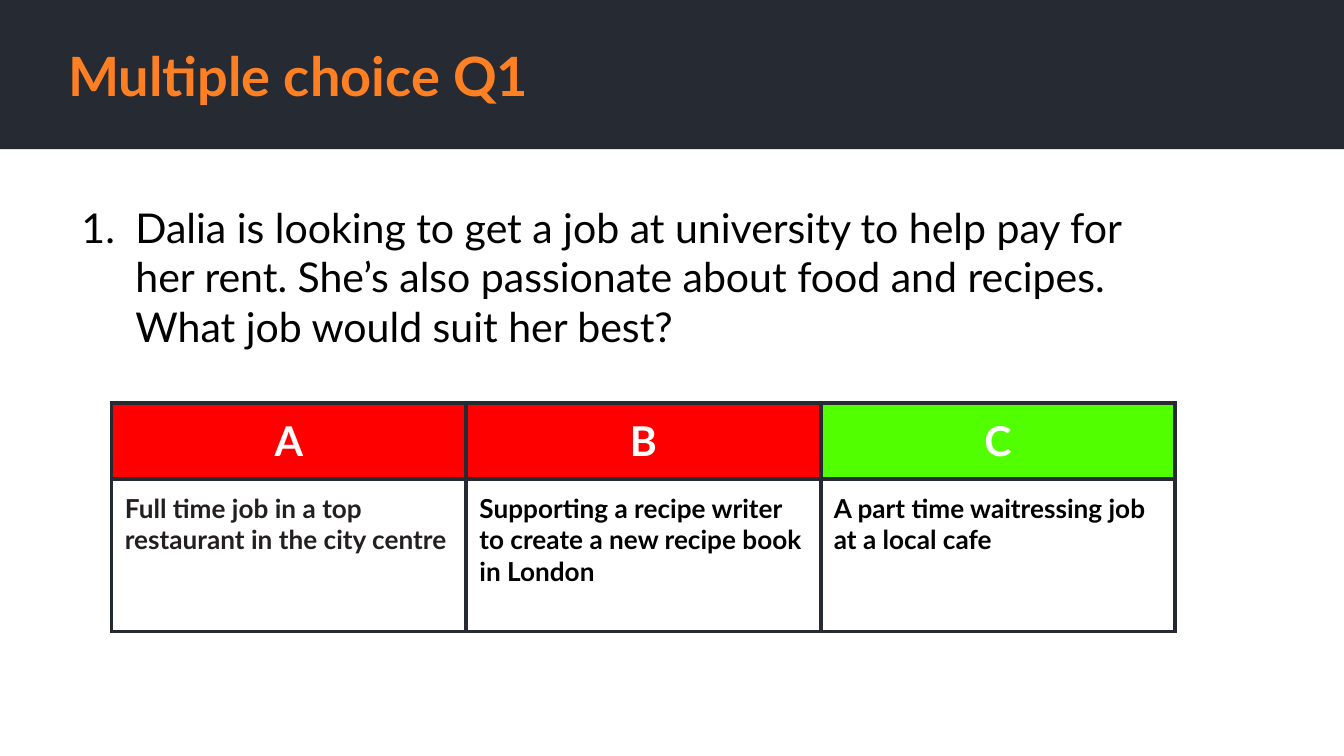
from collections import namedtuple

from lxml import etree
from pptx import Presentation
from pptx.dml.color import RGBColor
from pptx.enum.shapes import MSO_SHAPE as Shape
from pptx.enum.text import MSO_ANCHOR as Anchor, MSO_AUTO_SIZE as AutoSize, PP_ALIGN as Align
from pptx.oxml.ns import qn
from pptx.util import Cm, Pt

Box = namedtuple("Box", "left top width height")

FONT = "Lato"
DARK, ORANGE, RED, GREEN = "262A33", "FF8022", "FF0000", "51FF00"
BLACK, WHITE, CHARCOAL = "000000", "FFFFFF", "231F20"
INSET = 0.25
BORDER = Pt(2.25)

# Letter, header fill, answer, answer colour
ANSWERS = [
    ("A", RED, "Full time job in a top restaurant in the city centre", CHARCOAL),
    ("B", RED, "Supporting a recipe writer to create a new recipe book in London", BLACK),
    ("C", GREEN, "A part time waitressing job at a local cafe", BLACK),
]


def rgb(value):
    return RGBColor.from_string(value)


def place(shape, box):
    shape.left, shape.top, shape.width, shape.height = map(Cm, box)


def set_insets(frame):
    frame.margin_left = frame.margin_right = Cm(INSET)
    frame.margin_top = frame.margin_bottom = Cm(INSET)


def write(paragraph, text, size, color, bold=False, align=Align.LEFT):
    paragraph.text = text
    paragraph.alignment = align
    paragraph.space_before = Pt(0)
    font = paragraph.font
    font.name, font.size, font.bold = FONT, Pt(size), bold
    font.color.rgb = rgb(color)


def number_paragraph(paragraph, color, margin, hanging):
    properties = paragraph._p.get_or_add_pPr()
    properties.set("marL", str(Cm(margin)))
    properties.set("indent", str(-Cm(hanging)))
    bullet_color = etree.SubElement(properties, qn("a:buClr"))
    etree.SubElement(bullet_color, qn("a:srgbClr"), val=color)
    etree.SubElement(properties, qn("a:buFont"), typeface=FONT)
    etree.SubElement(properties, qn("a:buAutoNum"), type="arabicPeriod")


def add_borders(cell, color):
    properties = cell._tc.get_or_add_tcPr()
    for side in ("lnL", "lnR", "lnT", "lnB"):
        line = etree.SubElement(properties, qn(f"a:{side}"), w=str(BORDER))
        fill = etree.SubElement(line, qn("a:solidFill"))
        etree.SubElement(fill, qn("a:srgbClr"), val=color)


def fill_placeholder(placeholder, box, anchor):
    place(placeholder, box)
    frame = placeholder.text_frame
    frame.word_wrap = True
    frame.auto_size = AutoSize.NONE
    frame.vertical_anchor = anchor
    set_insets(frame)
    return frame.paragraphs[0]


def add_header(slide, box, text):
    # Dark band behind the title
    band = slide.shapes.add_shape(Shape.RECTANGLE, *map(Cm, box))
    band.shadow.inherit = False
    band.fill.solid()
    band.fill.fore_color.rgb = rgb(DARK)
    band.line.fill.background()
    slide.shapes._spTree.insert(2, band._element)

    # Title, centred vertically in the band
    height = 1.42
    title_box = Box(box.left + 1.04, box.top + (box.height - height) / 2,
                    box.width - 3.2, height)
    paragraph = fill_placeholder(slide.shapes.title, title_box, Anchor.MIDDLE)
    write(paragraph, text, 29, ORANGE, bold=True)


def add_question(slide, box, text):
    paragraph = fill_placeholder(slide.placeholders[1], box, Anchor.TOP)
    number_paragraph(paragraph, BLACK, margin=1.27, hanging=1.02)
    write(paragraph, text, 22, BLACK)


def add_answers(slide, box, answers):
    table = slide.shapes.add_table(2, len(answers), *map(Cm, box)).table
    table.first_row = table.horz_banding = False
    table.rows[0].height = Cm(box.height / 3)
    table.rows[1].height = Cm(box.height * 2 / 3)

    for column, (letter, fill, answer, color) in enumerate(answers):
        header, body = table.cell(0, column), table.cell(1, column)
        for cell in (header, body):
            set_insets(cell)
            add_borders(cell, DARK)
        header.fill.solid()
        header.fill.fore_color.rgb = rgb(fill)
        body.fill.background()
        write(header.text_frame.paragraphs[0], letter, 22, WHITE, True, Align.CENTER)
        write(body.text_frame.paragraphs[0], answer, 14, color, True)


def main():
    presentation = Presentation()
    presentation.slide_width, presentation.slide_height = Cm(25.4), Cm(14.29)
    slide = presentation.slides.add_slide(presentation.slide_layouts[1])

    add_header(slide, Box(0, 0, 25.4, 2.82), "Multiple choice Q1")
    add_question(slide, Box(1.04, 3.58, 21.29, 3.33),
                 "Dalia is looking to get a job at university to help pay for her rent. "
                 "She’s also passionate about food and recipes. "
                 "What job would suit her best?")
    add_answers(slide, Box(2.11, 7.62, 20.1, 4.32), ANSWERS)

    presentation.save("out.pptx")


if __name__ == "__main__":
    main()
